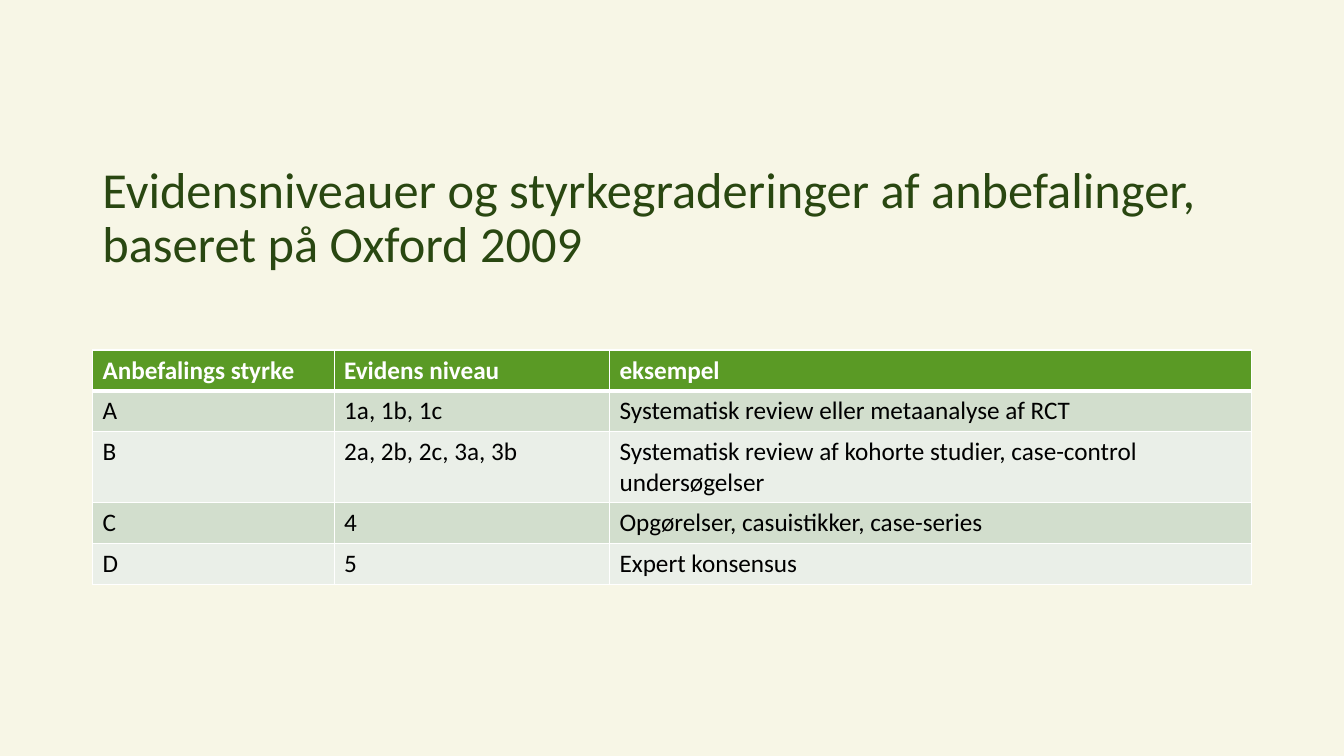
from dataclasses import dataclass

from lxml.etree import SubElement
from pptx import Presentation
from pptx.dml.color import RGBColor as Color
from pptx.enum.text import MSO_ANCHOR as Anchor
from pptx.oxml.ns import qn
from pptx.util import Cm, Pt


@dataclass(frozen=True)
class Theme:
    font: str = "Calibri"
    background: str = "F7F6E6"
    title: str = "294711"
    header_fill: str = "5A9A25"
    header_text: str = "FFFFFF"
    body_text: str = "000000"
    bands: tuple = ("D2DECD", "EAEFE8")
    border: str = "FFFFFF"
    title_size: int = 36
    table_size: int = 18
    thin_line: int = 1
    thick_line: int = 3


theme = Theme()


def style_text(paragraph, size, color, bold=False):
    for span in paragraph.runs:
        span.font.name = theme.font
        span.font.size = Pt(size)
        span.font.bold = bold
        span.font.color.rgb = Color.from_string(color)


def add_border(cell, side, points):
    """Draw one side of a cell; side is L, R, T or B."""
    properties = cell._tc.get_or_add_tcPr()
    line = SubElement(properties, qn(f"a:ln{side}"), w=str(Pt(points)))
    fill = SubElement(line, qn("a:solidFill"))
    SubElement(fill, qn("a:srgbClr"), val=theme.border)


deck = Presentation()
deck.slide_width, deck.slide_height = Cm(33.87), Cm(19.05)
page = deck.slides.add_slide(deck.slide_layouts[6])
page.background.fill.solid()
page.background.fill.fore_color.rgb = Color.from_string(theme.background)

left, width = Cm(2.33), Cm(29.21)

# Title
box = page.shapes.add_textbox(left, Cm(3.71), width, Cm(3.63))
frame = box.text_frame
frame.word_wrap = True
frame.vertical_anchor = Anchor.MIDDLE
frame.text = "Evidensniveauer og styrkegraderinger af anbefalinger, baseret på Oxford 2009"
para = frame.paragraphs[0]
para.line_spacing = 0.9
style_text(para, theme.title_size, theme.title)

# Evidence table
rows = [
    ("Anbefalings styrke", "Evidens niveau", "eksempel"),
    ("A", "1a, 1b, 1c", "Systematisk review eller metaanalyse af RCT"),
    ("B", "2a, 2b, 2c, 3a, 3b",
     "Systematisk review af kohorte studier, case-control undersøgelser"),
    ("C", "4", "Opgørelser, casuistikker, case-series"),
    ("D", "5", "Expert konsensus"),
]
column_widths = (Cm(6.09), Cm(6.94), Cm(16.18))
row_height, table_height = Cm(1.03), Cm(5.9)

table_frame = page.shapes.add_table(
    len(rows), len(column_widths), left, Cm(8.82), width, table_height)
table = table_frame.table
for column, column_width in zip(table.columns, column_widths):
    column.width = column_width

for row_index, values in enumerate(rows):
    table.rows[row_index].height = row_height
    is_header = row_index == 0
    fill_color = theme.header_fill if is_header else theme.bands[(row_index - 1) % 2]
    text_color = theme.header_text if is_header else theme.body_text
    thick_side = {0: "B", 1: "T"}.get(row_index)
    for column_index, value in enumerate(values):
        cell = table.cell(row_index, column_index)
        cell.text_frame.text = value
        style_text(cell.text_frame.paragraphs[0], theme.table_size, text_color, is_header)
        for side in "LRTB":
            add_border(cell, side, theme.thick_line if side == thick_side else theme.thin_line)
        cell.fill.solid()
        cell.fill.fore_color.rgb = Color.from_string(fill_color)

# The wrapped row makes the table taller than the sum of its row heights
table_frame.height = table_height

deck.save("out.pptx")
